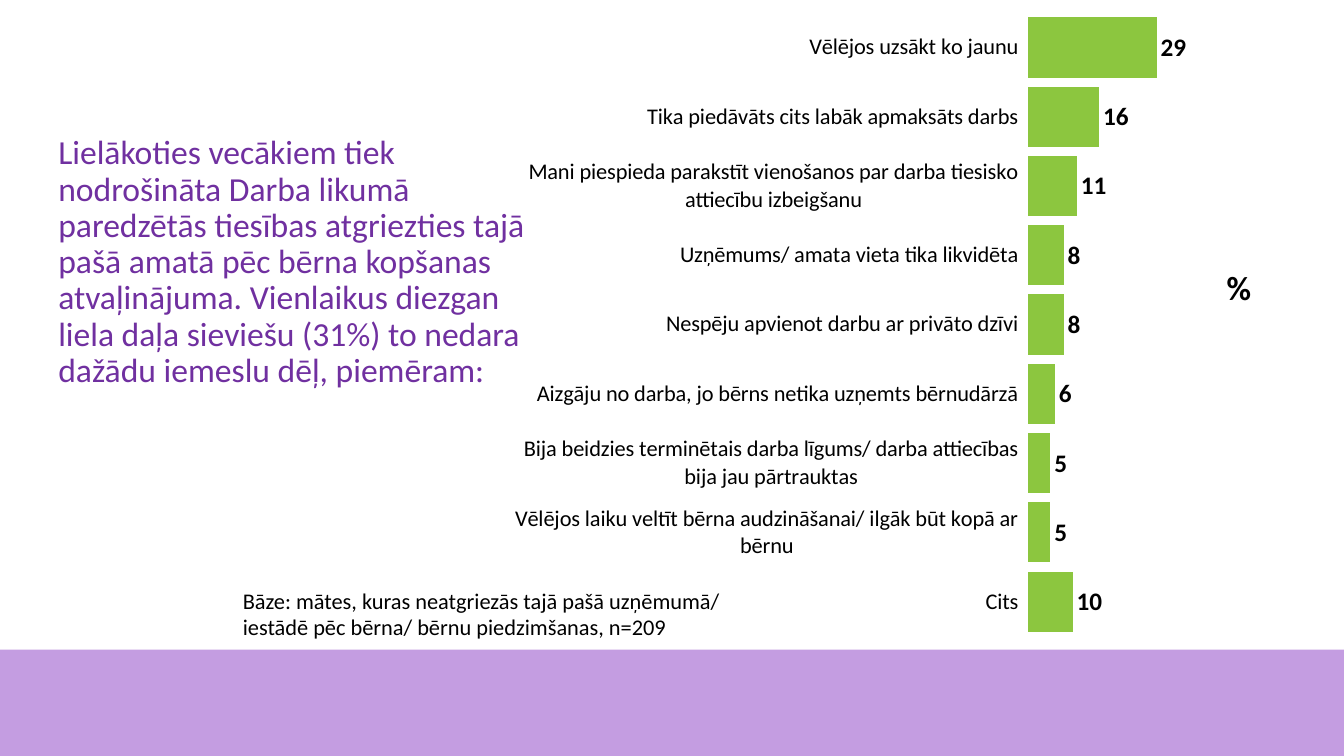
from lxml import etree
from pptx import Presentation
from pptx.chart.data import CategoryChartData
from pptx.dml.color import RGBColor
from pptx.enum.chart import XL_CHART_TYPE as ChartType
from pptx.enum.chart import XL_LABEL_POSITION as LabelPosition
from pptx.enum.chart import XL_TICK_LABEL_POSITION as TickLabels
from pptx.enum.chart import XL_TICK_MARK as TickMark
from pptx.enum.shapes import MSO_SHAPE as Preset
from pptx.enum.text import MSO_ANCHOR as Anchor
from pptx.oxml.ns import qn
from pptx.util import Cm, Pt

COLORS = {
    "band": "C49DE1",
    "heading": "7030A0",
    "bar": "8CC63F",
    "text": "000000",
    "axis": "FFFFFF",
}

REASONS = [
    ("Vēlējos uzsākt ko jaunu", 29),
    ("Tika piedāvāts cits labāk apmaksāts darbs", 16),
    ("Mani piespieda parakstīt vienošanos par darba tiesisko attiecību izbeigšanu", 11),
    ("Uzņēmums/ amata vieta tika likvidēta", 8),
    ("Nespēju apvienot darbu ar privāto dzīvi", 8),
    ("Aizgāju no darba, jo bērns netika uzņemts bērnudārzā", 6),
    ("Bija beidzies terminētais darba līgums/ darba attiecības bija jau pārtrauktas", 5),
    ("Vēlējos laiku veltīt bērna audzināšanai/ ilgāk būt kopā ar bērnu", 5),
    ("Cits", 10),
]


class SlideBuilder:
    font_name = "Calibri"

    def __init__(self, slide):
        self.slide = slide

    def color(self, name):
        return RGBColor.from_string(COLORS[name])

    def style(self, font, size, color="text", bold=False):
        font.name = self.font_name
        font.size = Pt(size)
        font.bold = bold
        font.color.rgb = self.color(color)

    def band(self, left, top, width, height):
        band = self.slide.shapes.add_shape(
            Preset.RECTANGLE, Cm(left), Cm(top), Cm(width), Cm(height))
        band.shadow.inherit = False
        band.fill.solid()
        band.fill.fore_color.rgb = self.color("band")
        band.line.fill.background()

    def text(self, content, left, top, width, height, size, color="text",
             bold=False, anchor=Anchor.TOP, wrap=True, spacing=1.0):
        frame = self.slide.shapes.add_textbox(
            Cm(left), Cm(top), Cm(width), Cm(height)).text_frame
        frame.word_wrap = wrap
        frame.vertical_anchor = anchor
        frame.text = content
        paragraph = frame.paragraphs[0]
        paragraph.line_spacing = spacing
        self.style(paragraph.runs[0].font, size, color, bold)

    def bar_chart(self, rows, left, top, width, height, maximum, plot_area):
        data = CategoryChartData(number_format="0")
        data.categories = [label for label, _ in rows]
        data.add_series("Series 1", [share for _, share in rows])
        chart = self.slide.shapes.add_chart(
            ChartType.BAR_CLUSTERED, Cm(left), Cm(top), Cm(width), Cm(height), data).chart
        chart.has_legend = False
        chart.has_title = False
        self.style(chart.font, 11)

        reasons = chart.category_axis
        reasons.reverse_order = True
        reasons.major_tick_mark = TickMark.NONE
        reasons.minor_tick_mark = TickMark.NONE
        reasons.tick_label_position = TickLabels.LOW
        reasons.has_major_gridlines = False
        reasons.format.line.color.rgb = self.color("axis")
        reasons.format.line.width = Pt(0.75)
        self.style(reasons.tick_labels.font, 16)

        shares = chart.value_axis
        shares.minimum_scale = 0
        shares.maximum_scale = maximum
        shares.has_major_gridlines = False
        shares.visible = False

        plot = chart.plots[0]
        plot.gap_width = 15
        plot.vary_by_categories = False
        bars = plot.series[0]
        bars.invert_if_negative = False
        bars.format.fill.solid()
        bars.format.fill.fore_color.rgb = self.color("bar")
        labels = bars.data_labels
        labels.show_value = True
        labels.number_format = "0"
        labels.number_format_is_linked = False
        labels.position = LabelPosition.OUTSIDE_END
        self.style(labels.font, 18, bold=True)
        self.place_plot(chart, plot_area)

    def place_plot(self, chart, plot_area):
        area = chart.element.find(".//" + qn("c:plotArea"))
        layout = area.find(qn("c:layout"))
        if layout is None:
            layout = etree.Element(qn("c:layout"))
            area.insert(0, layout)
        manual = etree.SubElement(layout, qn("c:manualLayout"))
        settings = [("layoutTarget", "inner"), ("xMode", "edge"), ("yMode", "edge")]
        settings += zip("xywh", plot_area)
        for tag, value in settings:
            etree.SubElement(manual, qn("c:" + tag)).set("val", str(value))


def main():
    deck = Presentation()
    deck.slide_width = Cm(33.87)
    deck.slide_height = Cm(19.05)
    builder = SlideBuilder(deck.slides.add_slide(deck.slide_layouts[6]))

    builder.band(0, 16.37, 33.87, 2.68)
    builder.text(
        "Lielākoties vecākiem tiek nodrošināta Darba likumā paredzētās tiesības "
        "atgriezties tajā pašā amatā pēc bērna kopšanas atvaļinājuma. Vienlaikus "
        "diezgan liela daļa sieviešu (31%) to nedara dažādu iemeslu dēļ, piemēram:",
        1.22, 4.78, 12.52, 3.68, 24, "heading", anchor=Anchor.MIDDLE, spacing=0.9)
    builder.bar_chart(REASONS, 12.73, 0, 23.34, 16.28, 90, (0.565, 0.02, 0.43, 0.965))
    builder.text(
        "Bāze: mātes, kuras neatgriezās tajā pašā uzņēmumā/ iestādē pēc bērna/ "
        "bērnu piedzimšanas, n=209", 5.87, 14.66, 13.74, 1.63, 16)
    builder.text("%", 30.66, 6.6, 1.14, 1.27, 24, bold=True, wrap=False)

    deck.save("out.pptx")


if __name__ == "__main__":
    main()
